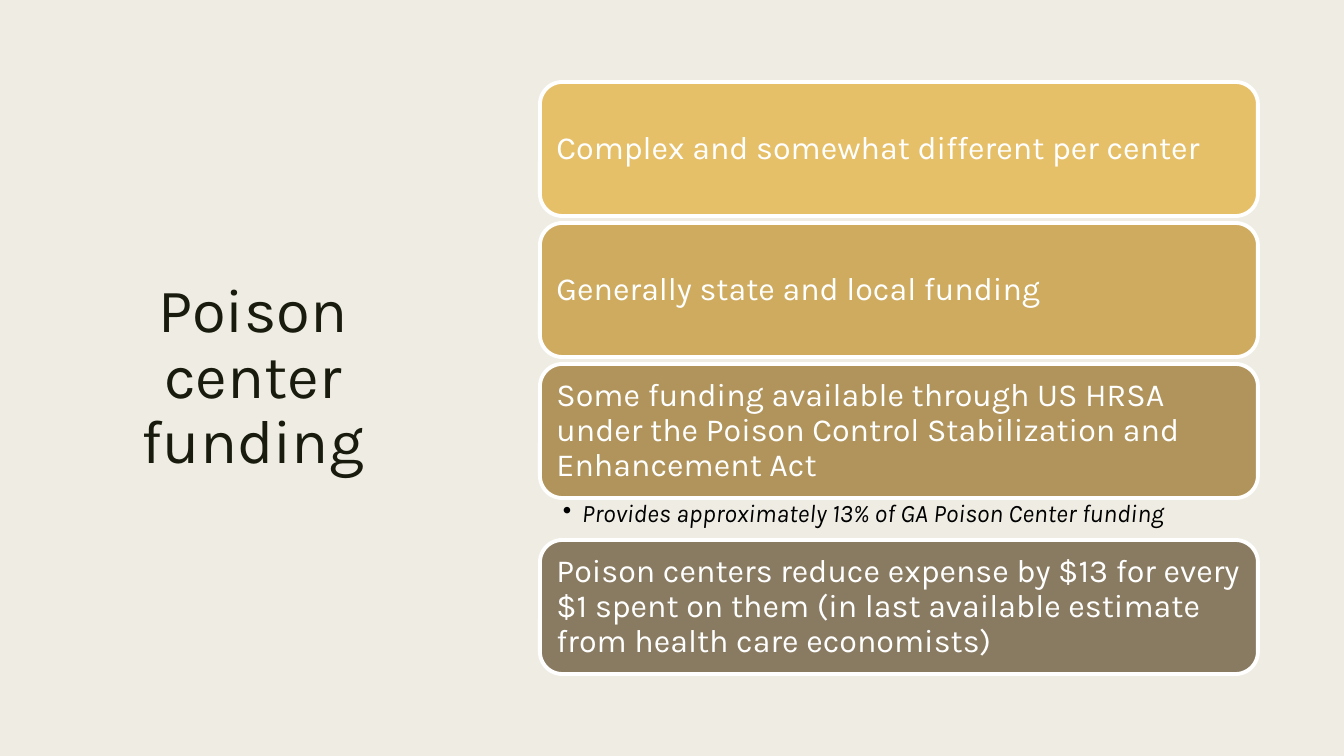
import pptx
import pptx.util
import pptx.dml.color
import pptx.enum.shapes
import pptx.enum.text
import pptx.oxml.ns
import lxml.etree

SCALE = 914400 / 100.8
FONT = "Karla"
ALIGN = pptx.enum.text.PP_ALIGN
ANCHOR = pptx.enum.text.MSO_ANCHOR

# Card column, in px
LEFT, TOP, WIDTH, HEIGHT, GAP = 540, 82, 718, 134, 7
NOTE_H = 42

# Card text, fill, note below
CARDS = [
    ("Complex and somewhat different per center", "E6C069", None),
    ("Generally state and local funding", "CEAB5F", None),
    ("Some funding available through US HRSA under the Poison Control "
     "Stabilization and Enhancement Act", "B0945B",
     "Provides approximately 13% of GA Poison Center funding"),
    ("Poison centers reduce expense by $13 for every $1 spent on them "
     "(in last available estimate from health care economists)",
     "897B61", None),
]


def px(n):
    return pptx.util.Emu(round(n * SCALE))


def color(code):
    return pptx.dml.color.RGBColor.from_string(code)


def write(frame, text, size, code, align, anchor, insets, lines=0.9):
    """Fill a text frame with one run and return its paragraph."""
    frame.word_wrap = True
    frame.auto_size = pptx.enum.text.MSO_AUTO_SIZE.NONE
    frame.vertical_anchor = anchor
    (frame.margin_left, frame.margin_top,
     frame.margin_right, frame.margin_bottom) = map(px, insets)
    para = frame.paragraphs[0]
    para.alignment = align
    para.line_spacing = lines
    run = para.add_run()
    run.text = text
    run.font.name = FONT
    run.font.size = pptx.util.Pt(size)
    run.font.color.rgb = color(code)
    return para


def add_title(slide, text):
    title = slide.shapes.title
    title.left, title.top, title.width, title.height = map(
        px, (71, 71, 364, 615))
    write(title.text_frame, text, 44, "191B0E", ALIGN.CENTER,
          ANCHOR.MIDDLE, (10, 5, 10, 5), 0.89)


def add_card(slide, top, text, fill):
    card = slide.shapes.add_shape(
        pptx.enum.shapes.MSO_SHAPE.ROUNDED_RECTANGLE,
        px(LEFT), px(top), px(WIDTH), px(HEIGHT))
    card.shadow.inherit = False
    card.fill.solid()
    card.fill.fore_color.rgb = color(fill)
    card.line.color.rgb = color("FFFFFF")
    card.line.width = pptx.util.Pt(2.75)
    write(card.text_frame, text, 23, "FFFFFF", ALIGN.LEFT,
          ANCHOR.MIDDLE, (10, 10, 10, 10))


def add_note(slide, top, text):
    box = slide.shapes.add_textbox(px(LEFT), px(top), px(WIDTH), px(NOTE_H))
    para = write(box.text_frame, text, 18, "000000", ALIGN.LEFT,
                 ANCHOR.TOP, (23, 3, 18, 3))
    para.runs[0].font.italic = True
    # Hanging bullet
    props = para._p.get_or_add_pPr()
    props.set("marL", str(px(19)))
    props.set("indent", str(-px(19)))
    mark = lxml.etree.SubElement(props, pptx.oxml.ns.qn("a:buChar"))
    mark.set("char", "•")


def main():
    deck = pptx.Presentation()
    deck.slide_width = px(1344)
    deck.slide_height = px(756)
    slide = deck.slides.add_slide(deck.slide_layouts[5])
    slide.background.fill.solid()
    slide.background.fill.fore_color.rgb = color("EFEDE3")

    add_title(slide, "Poison center funding")

    # Stack the cards; a note takes the place of the gap
    top = TOP
    for text, fill, note in CARDS:
        add_card(slide, top, text, fill)
        top += HEIGHT
        if note:
            add_note(slide, top, note)
            top += NOTE_H
        else:
            top += GAP

    deck.save("out.pptx")


if __name__ == "__main__":
    main()
